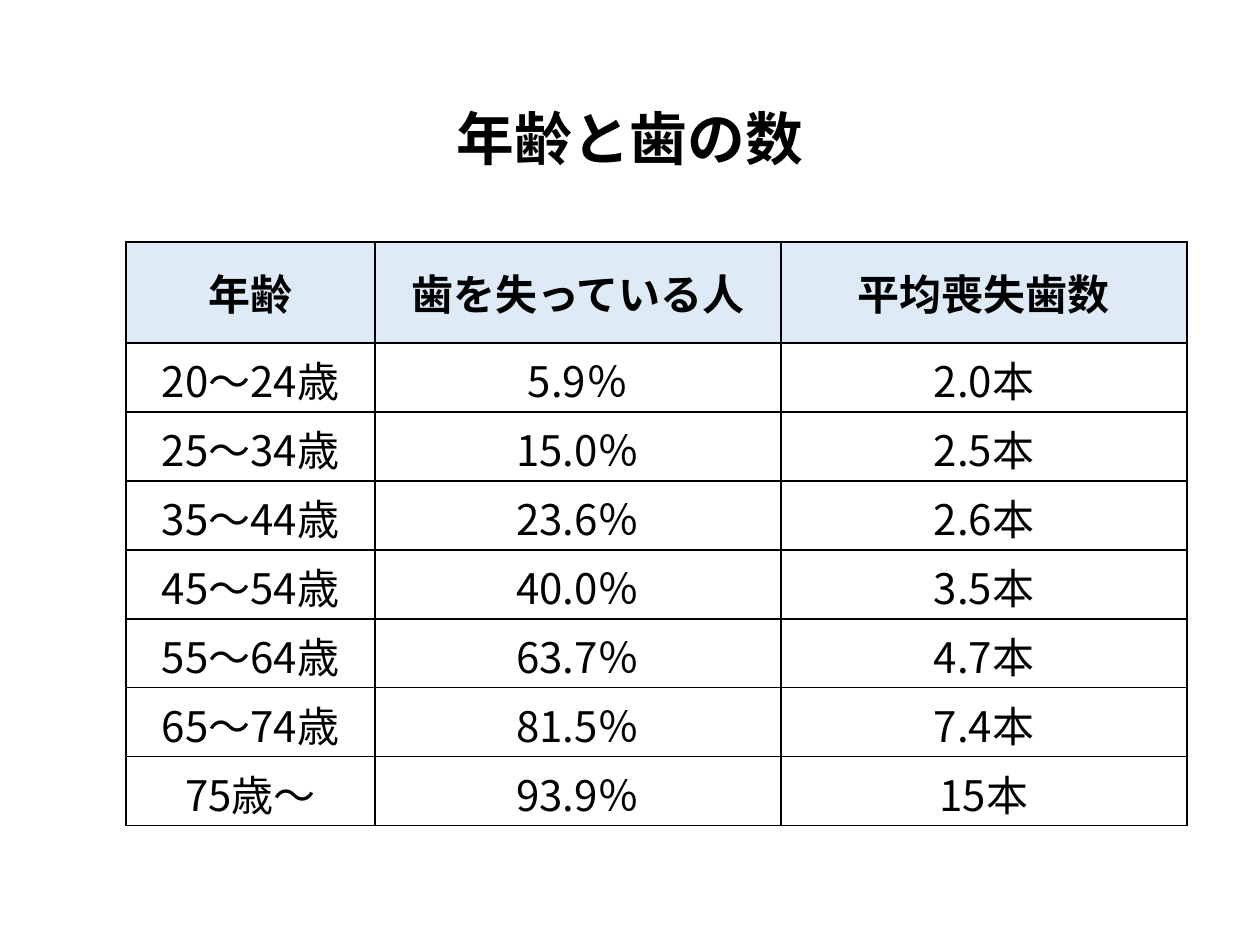
from lxml import etree
from pptx import Presentation
from pptx.dml.color import RGBColor
from pptx.enum.text import MSO_ANCHOR, PP_ALIGN
from pptx.oxml.ns import qn
from pptx.util import Pt

CENTER = PP_ALIGN.CENTER
MIDDLE = MSO_ANCHOR.MIDDLE
TOP = MSO_ANCHOR.TOP

BLACK = RGBColor(0x00, 0x00, 0x00)
PALE_BLUE = RGBColor(0xDE, 0xEB, 0xF7)
FONT = "Noto Sans CJK JP"

EMU_PER_INCH = 914400
PX_PER_INCH = 126

HEADERS = ("年齢", "歯を失っている人", "平均喪失歯数")
ROWS = (
    ("20～24歳", "5.9％", "2.0本"),
    ("25～34歳", "15.0％", "2.5本"),
    ("35～44歳", "23.6％", "2.6本"),
    ("45～54歳", "40.0％", "3.5本"),
    ("55～64歳", "63.7％", "4.7本"),
    ("65～74歳", "81.5％", "7.4本"),
    ("75歳～", "93.9％", "15本"),
)
COL_WIDTHS = (249, 406, 406)
HEADER_HEIGHT = 101
ROW_HEIGHT = 69


def px(n):
    return round(n * EMU_PER_INCH / PX_PER_INCH)


def write(tf, text, size, bold):
    p = tf.paragraphs[0]
    p.alignment = CENTER
    r = p.add_run()
    r.text = text
    r.font.size = Pt(size)
    r.font.bold = bold
    r.font.color.rgb = BLACK
    r.font.name = FONT
    etree.SubElement(r.font._element, qn("a:ea"), typeface=FONT)
    return p


def add_title(s, text, x, y, w, h):
    tf = s.shapes.add_textbox(px(x), px(y), px(w), px(h)).text_frame
    tf.word_wrap = True
    tf.vertical_anchor = MIDDLE
    write(tf, text, 33, True).line_spacing = 0.9


def add_borders(cell):
    tc_pr = cell._tc.get_or_add_tcPr()
    for side in ("a:lnL", "a:lnR", "a:lnT", "a:lnB"):
        ln = etree.SubElement(tc_pr, qn(side), w=str(Pt(1)))
        fill = etree.SubElement(ln, qn("a:solidFill"))
        etree.SubElement(fill, qn("a:srgbClr"), val=str(BLACK))


def fill_cell(cell, text, is_header):
    add_borders(cell)
    if is_header:
        cell.fill.solid()
        cell.fill.fore_color.rgb = PALE_BLUE
    else:
        cell.fill.background()
    cell.vertical_anchor = MIDDLE if is_header else TOP
    write(cell.text_frame, text, 24, is_header)


def add_data_table(s, x, y):
    records = (HEADERS, *ROWS)
    height = HEADER_HEIGHT + ROW_HEIGHT * len(ROWS)
    table = s.shapes.add_table(
        len(records), len(HEADERS), px(x), px(y), px(sum(COL_WIDTHS)), px(height)
    ).table
    table.horz_banding = False
    for column, width in zip(table.columns, COL_WIDTHS):
        column.width = px(width)
    for i, (row, record) in enumerate(zip(table.rows, records)):
        row.height = px(ROW_HEIGHT if i else HEADER_HEIGHT)
        for cell, text in zip(row.cells, record):
            fill_cell(cell, text, i == 0)


def main():
    prs = Presentation()
    prs.slide_width, prs.slide_height = px(1260), px(945)
    s = prs.slides.add_slide(prs.slide_layouts[6])
    add_title(s, "年齢と歯の数", 87, 50, 1086, 183)
    add_data_table(s, 126, 242)
    prs.save("out.pptx")


if __name__ == "__main__":
    main()
